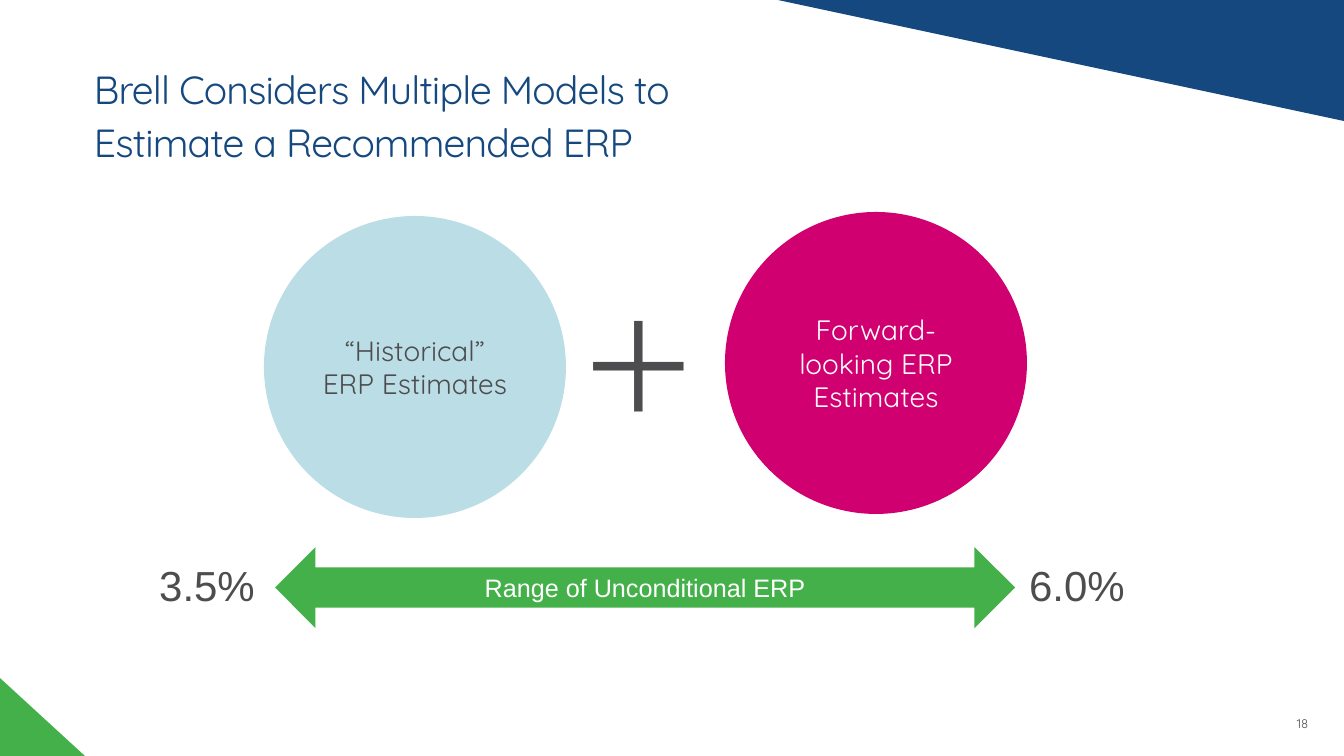
"""Build the slide on the models behind a recommended ERP."""
import pptx
import pptx.dml.color
import pptx.enum.shapes
import pptx.enum.text
import pptx.util

PIXEL = pptx.util.Inches(1) / 100.8
COLOURS = {
    "blue": "14487F",
    "green": "43B049",
    "grey": "4D4D4F",
    "pale": "BBDDE6",
    "magenta": "D00070",
    "white": "FFFFFF",
}
SHAPES = pptx.enum.shapes.MSO_SHAPE
ANCHOR = pptx.enum.text.MSO_ANCHOR
ALIGN = pptx.enum.text.PP_ALIGN


def emu(pixels):
    """Turn a length in pixels into EMU."""
    return pptx.util.Emu(round(pixels * PIXEL))


def colour(name):
    """Look up a named colour."""
    return pptx.dml.color.RGBColor.from_string(COLOURS[name])


def apply(target, values):
    """Set each attribute in a dict of format values."""
    for name, value in values.items():
        setattr(target, name, value)


def paint(shape, fill):
    """Give a shape a flat fill with no line or shadow."""
    shape.shadow.inherit = False
    shape.fill.solid()
    shape.fill.fore_color.rgb = colour(fill)
    shape.line.fill.background()


def write(shape, text, size, font, ink, frame, layout):
    """Write one formatted paragraph in a shape."""
    apply(shape.text_frame, frame)
    paragraph = shape.text_frame.paragraphs[0]
    paragraph.text = text
    apply(paragraph, layout)
    for run in paragraph.runs:
        apply(run.font, {"name": font, "size": pptx.util.Pt(size)})
        run.font.color.rgb = colour(ink)
    return paragraph


def add_corner(slide, points, fill):
    """Draw a filled corner triangle."""
    builder = slide.shapes.build_freeform(*points[0], scale=PIXEL)
    builder.add_line_segments(points[1:], close=True)
    paint(builder.convert_to_shape(), fill)


def add_block(slide, kind, box, fill, text, size, font, ink):
    """Draw a preset shape with centred text."""
    shape = slide.shapes.add_shape(kind, *map(emu, box))
    paint(shape, fill)
    frame = {"word_wrap": True, "vertical_anchor": ANCHOR.MIDDLE}
    write(shape, text, size, font, ink, frame, {"alignment": ALIGN.CENTER})


def add_label(slide, box, text, size, font):
    """Place a centred grey label on a single line."""
    shape = slide.shapes.add_textbox(*map(emu, box))
    frame = {
        "word_wrap": False,
        "auto_size": pptx.enum.text.MSO_AUTO_SIZE.SHAPE_TO_FIT_TEXT,
    }
    write(shape, text, size, font, "grey", frame, {"alignment": ALIGN.CENTER})


def add_title(slide, text):
    """Place the slide title with slightly tightened letters."""
    shape = slide.shapes.add_textbox(*map(emu, (84, 64, 1144, 96)))
    frame = {"word_wrap": True, "vertical_anchor": ANCHOR.MIDDLE}
    paragraph = write(shape, text, 28, "Quicksand", "blue", frame, {"line_spacing": 1.13})
    for run in paragraph.runs:
        run.font._element.set("spc", "-60")


def add_page_number(slide, text):
    """Place the page number at the lower right."""
    shape = slide.shapes.add_textbox(*map(emu, (1297, 712, 47, 19)))
    frame = dict.fromkeys(("margin_left", "margin_top", "margin_right", "margin_bottom"), 0)
    frame.update(word_wrap=True, vertical_anchor=ANCHOR.BOTTOM)
    write(shape, text, 9, "Quicksand", "grey", frame, {})


def main():
    """Build and save the slide."""
    presentation = pptx.Presentation()
    apply(presentation, {"slide_width": emu(1344), "slide_height": emu(756)})
    slide = presentation.slides.add_slide(presentation.slide_layouts[6])

    add_corner(slide, [(778, 0), (1344, 0), (1344, 121)], "blue")
    add_corner(slide, [(0, 678), (85, 756), (0, 756)], "green")
    add_page_number(slide, "18")

    circles = [
        (264, 216, "pale", "“Historical” ERP Estimates", "grey"),
        (725, 212, "magenta", "Forward-looking ERP Estimates", "white"),
    ]
    for left, top, fill, text, ink in circles:
        add_block(slide, SHAPES.OVAL, (left, top, 302, 302), fill, text, 20, "Quicksand", ink)
    add_label(slide, (564, 284, 150, 160), "＋", 89, "Quicksand")

    for left, rate in ((145, "3.5%"), (1015, "6.0%")):
        add_label(slide, (left, 555, 124, 60), rate, 30, "Arial")
    add_block(slide, SHAPES.LEFT_RIGHT_ARROW, (275, 547, 740, 81), "green",
              "Range of Unconditional ERP", 18, "Arial", "white")

    add_title(slide, "Brell Considers Multiple Models to\vEstimate a Recommended ERP")
    presentation.save("out.pptx")


if __name__ == "__main__":
    main()
